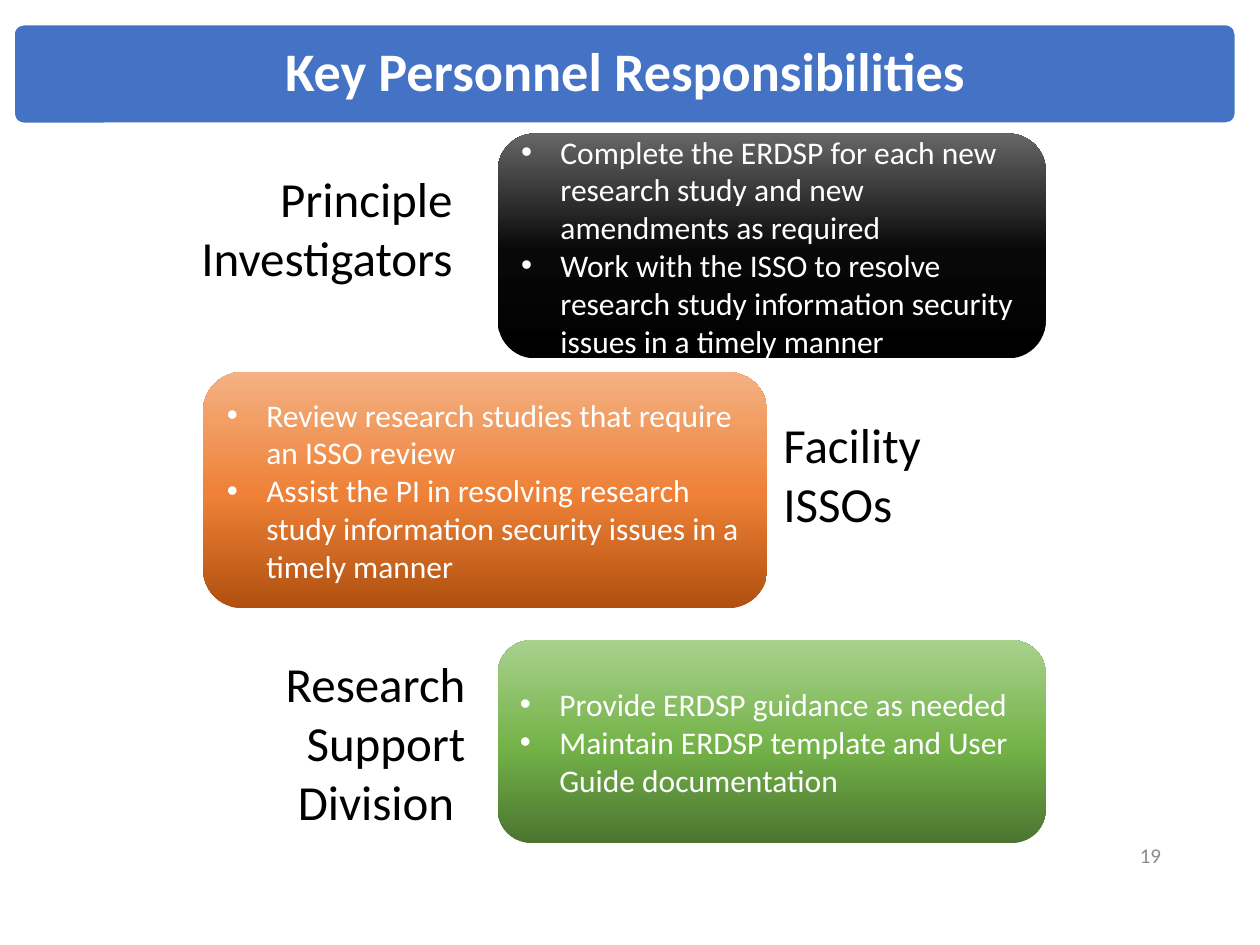
from dataclasses import dataclass

from lxml import etree
from pptx import Presentation
from pptx.dml.color import RGBColor
from pptx.enum import shapes, text
from pptx.oxml import ns
from pptx.util import Pt


@dataclass(frozen=True)
class Theme:
    font: str = "Calibri"
    white: str = "FFFFFF"
    black: str = "000000"
    grey: str = "8C8C8C"
    blue: str = "4472C4"
    # Gradients run from bottom to top
    dark: tuple = ("000000", "080808", "666666")
    orange: tuple = ("B0500F", "EE8137", "F4B183")
    green: tuple = ("4B7430", "74B349", "A9D18E")
    gradient_stops: tuple = (0, 48, 100)
    title_size: int = 31
    label_size: int = 28
    body_size: int = 18
    number_size: int = 12


THEME = Theme()
ALIGN = text.PP_ALIGN
ANCHOR = text.MSO_ANCHOR


def style_paragraph(paragraph, size, color, align=ALIGN.LEFT, bold=False):
    paragraph.alignment = align
    font = paragraph.font
    font.name, font.size, font.bold = THEME.font, Pt(size), bold
    font.color.rgb = RGBColor.from_string(color)


def add_rounded_box(slide, box):
    shape = slide.shapes.add_shape(
        shapes.MSO_SHAPE.ROUNDED_RECTANGLE, *map(Pt, box))
    shape.shadow.inherit = False
    shape.text_frame.word_wrap = True
    shape.text_frame.vertical_anchor = ANCHOR.MIDDLE
    return shape


def fill_gradient(shape, colors):
    shape.fill.gradient()
    shape.fill.gradient_angle = 90
    stops = shape._element.spPr.find(".//" + ns.qn("a:gsLst"))
    for stop in list(stops):
        stops.remove(stop)
    for position, color in zip(THEME.gradient_stops, colors):
        stop = etree.SubElement(stops, ns.qn("a:gs"), pos=str(position * 1000))
        etree.SubElement(stop, ns.qn("a:srgbClr"), val=color)


def add_bullet(paragraph):
    properties = paragraph._p.get_or_add_pPr()
    properties.set("marL", str(Pt(22.5)))
    properties.set("indent", str(-Pt(22.5)))
    etree.SubElement(properties, ns.qn("a:buFont"), typeface="Arial")
    etree.SubElement(properties, ns.qn("a:buChar"), char="•")


def add_title_bar(slide, box, title):
    shape = add_rounded_box(slide, box)
    shape.adjustments[0] = 0.1
    shape.fill.solid()
    shape.fill.fore_color.rgb = RGBColor.from_string(THEME.blue)
    shape.line.color.rgb = RGBColor.from_string(THEME.white)
    shape.line.width = Pt(1)
    paragraph = shape.text_frame.paragraphs[0]
    paragraph.text = title
    paragraph.line_spacing = 0.9
    style_paragraph(paragraph, THEME.title_size, THEME.white, ALIGN.CENTER, True)


def add_duties(slide, box, colors, duties):
    shape = add_rounded_box(slide, box)
    fill_gradient(shape, colors)
    shape.line.fill.background()
    frame = shape.text_frame
    for index, duty in enumerate(duties):
        paragraph = frame.add_paragraph() if index else frame.paragraphs[0]
        paragraph.text = duty
        add_bullet(paragraph)
        style_paragraph(paragraph, THEME.body_size, THEME.white)


def add_label(slide, box, words, size, color, align, anchor=ANCHOR.TOP):
    frame = slide.shapes.add_textbox(*map(Pt, box)).text_frame
    frame.word_wrap = True
    frame.vertical_anchor = anchor
    frame.paragraphs[0].text = words
    style_paragraph(frame.paragraphs[0], size, color, align)


def main():
    presentation = Presentation()
    presentation.slide_width, presentation.slide_height = Pt(720), Pt(540)
    slide = presentation.slides.add_slide(presentation.slide_layouts[6])

    add_title_bar(slide, (8, 14, 698, 56.5), "Key Personnel Responsibilities")

    roles = [
        ("Principle \vInvestigators ", (103, 93, 169, 75), ALIGN.RIGHT,
         (284.4, 76.3, 313.2, 128.5), THEME.dark,
         ["Complete the ERDSP for each new research study and new "
          "amendments as required",
          "Work with the ISSO to resolve research study information "
          "security issues in a timely manner"]),
        ("Facility ISSOs", (440.6, 233.3, 124.6, 75), ALIGN.LEFT,
         (116, 212.6, 322.5, 135), THEME.orange,
         ["Review research studies that require an ISSO review",
          "Assist the PI in resolving research study information "
          "security issues in a timely manner"]),
        ("Research Support Division ", (147, 370, 126, 109), ALIGN.RIGHT,
         (284.4, 365.8, 313.2, 116), THEME.green,
         ["Provide ERDSP guidance as needed",
          "Maintain ERDSP template and User Guide documentation"]),
    ]
    for role, label_box, align, duties_box, colors, duties in roles:
        add_duties(slide, duties_box, colors, duties)
        add_label(slide, label_box, role, THEME.label_size, THEME.black, align)

    add_label(slide, (508.5, 474.5, 162, 28.8), "19", THEME.number_size,
              THEME.grey, ALIGN.RIGHT, ANCHOR.MIDDLE)
    presentation.save("out.pptx")


if __name__ == "__main__":
    main()
